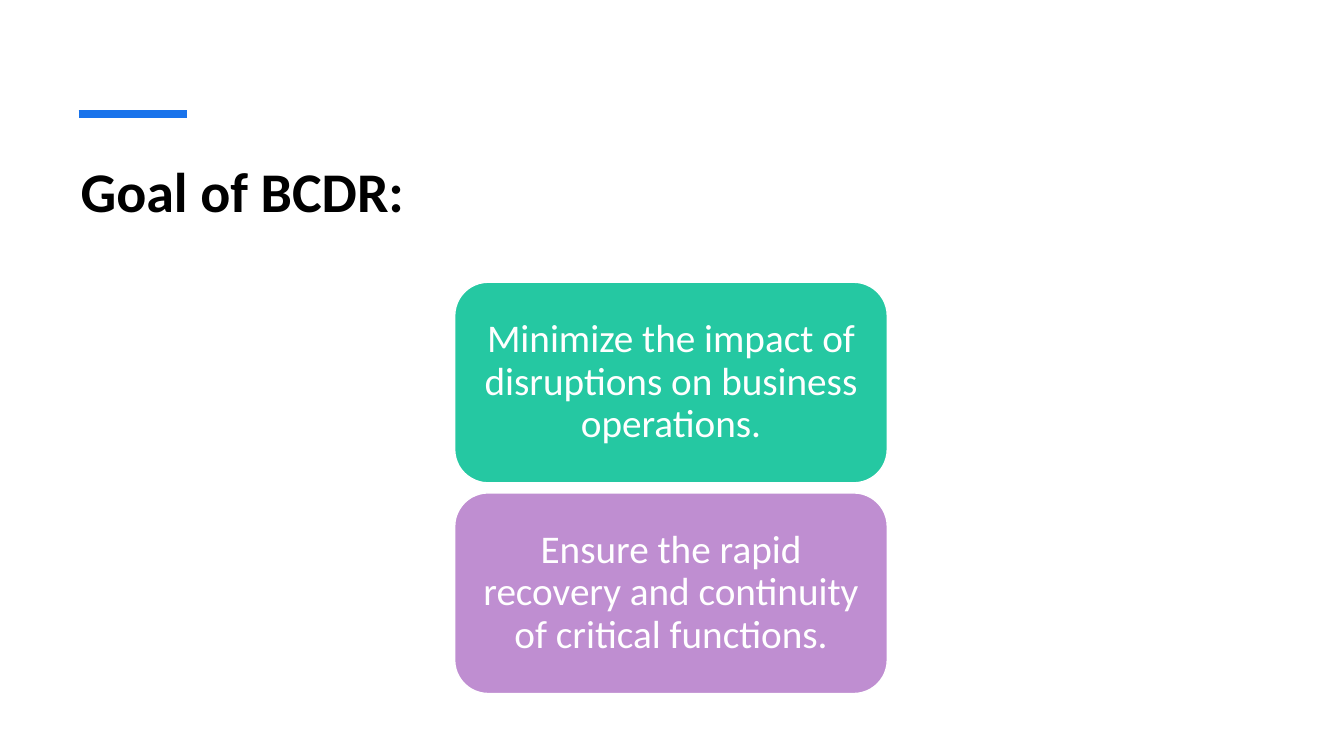
from dataclasses import dataclass

from lxml import etree
from pptx import Presentation
from pptx.dml.color import RGBColor
from pptx.enum.shapes import MSO_CONNECTOR, MSO_SHAPE
from pptx.enum.text import MSO_ANCHOR, MSO_AUTO_SIZE, PP_ALIGN
from pptx.oxml.ns import qn
from pptx.slide import Slide
from pptx.text.text import _Paragraph
from pptx.util import Inches, Pt

STRAIGHT = MSO_CONNECTOR.STRAIGHT
ROUNDED = MSO_SHAPE.ROUNDED_RECTANGLE
TOP, MIDDLE = MSO_ANCHOR.TOP, MSO_ANCHOR.MIDDLE
LEFT, CENTER = PP_ALIGN.LEFT, PP_ALIGN.CENTER
NO_AUTOFIT = MSO_AUTO_SIZE.NONE

BLACK = RGBColor(0x00, 0x00, 0x00)
WHITE = RGBColor(0xFF, 0xFF, 0xFF)
BLUE = RGBColor(0x19, 0x73, 0xEB)
GREEN = RGBColor(0x25, 0xC8, 0xA2)
PURPLE = RGBColor(0xBF, 0x8E, 0xD1)

FONT = "Calibri"
GOAL_LEFT, GOAL_TOP = 4.51, 2.8
GOAL_WIDTH, GOAL_HEIGHT = 4.29, 1.99
GOAL_PITCH = 2.09


@dataclass(frozen=True)
class Goal:
    text: str
    color: RGBColor


GOALS = [
    Goal("Minimize the impact of disruptions on business operations.", GREEN),
    Goal("Ensure the rapid recovery and continuity of critical functions.", PURPLE),
]


def add_run(paragraph: _Paragraph, text: str, size: float,
            color: RGBColor, bold: bool = False) -> None:
    run = paragraph.add_run()
    run.text = text
    run.font.name = FONT
    run.font.size = Pt(size)
    run.font.bold = bold
    run.font.color.rgb = color


def format_title(slide: Slide, text: str) -> None:
    title = slide.shapes.title
    title.left, title.top = Inches(0.7), Inches(1.5)
    title.width, title.height = Inches(11.91), Inches(1.2)
    frame = title.text_frame
    frame.vertical_anchor = TOP
    frame.auto_size = NO_AUTOFIT
    heading = frame.paragraphs[0]
    heading.alignment = LEFT
    add_run(heading, text, 40, BLACK, bold=True)


def add_accent(slide: Slide) -> None:
    """Draw the short thick rule above the title."""
    accent = slide.shapes.add_connector(
        STRAIGHT, Inches(0.78), Inches(1.13), Inches(1.85), Inches(1.13))
    accent.line.color.rgb = BLUE
    accent.line.width = Pt(6)
    etree.SubElement(accent._element.spPr, qn("a:effectLst"))


def add_goal(slide: Slide, goal: Goal, top: float) -> None:
    box = slide.shapes.add_shape(
        ROUNDED, Inches(GOAL_LEFT), Inches(top),
        Inches(GOAL_WIDTH), Inches(GOAL_HEIGHT))
    box.shadow.inherit = False
    box.fill.solid()
    box.fill.fore_color.rgb = goal.color
    box.line.color.rgb = WHITE
    box.line.width = Pt(1)

    frame = box.text_frame
    frame.word_wrap = True
    frame.vertical_anchor = MIDDLE
    frame.margin_left = frame.margin_right = Inches(0.12)
    frame.margin_top = frame.margin_bottom = Inches(0.06)
    statement = frame.paragraphs[0]
    statement.alignment = CENTER
    statement.line_spacing = 0.9
    add_run(statement, goal.text, 28, WHITE)


def main() -> None:
    deck = Presentation()
    deck.slide_width, deck.slide_height = Inches(13.33), Inches(7.5)
    slide = deck.slides.add_slide(deck.slide_layouts.get_by_name("Title Only"))
    format_title(slide, "Goal of BCDR:")
    add_accent(slide)
    for index, goal in enumerate(GOALS):
        add_goal(slide, goal, GOAL_TOP + index * GOAL_PITCH)
    deck.save("out.pptx")


if __name__ == "__main__":
    main()
